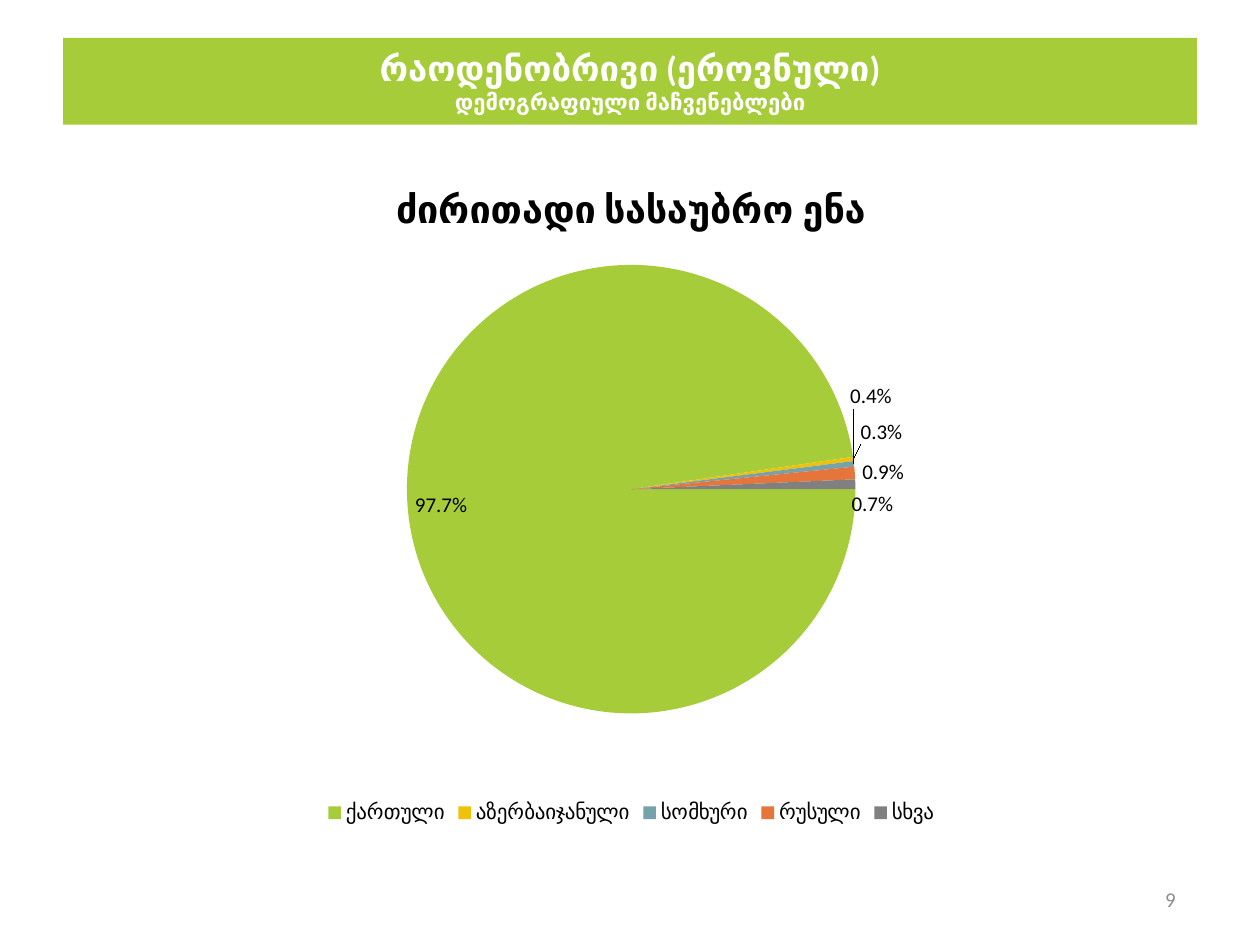
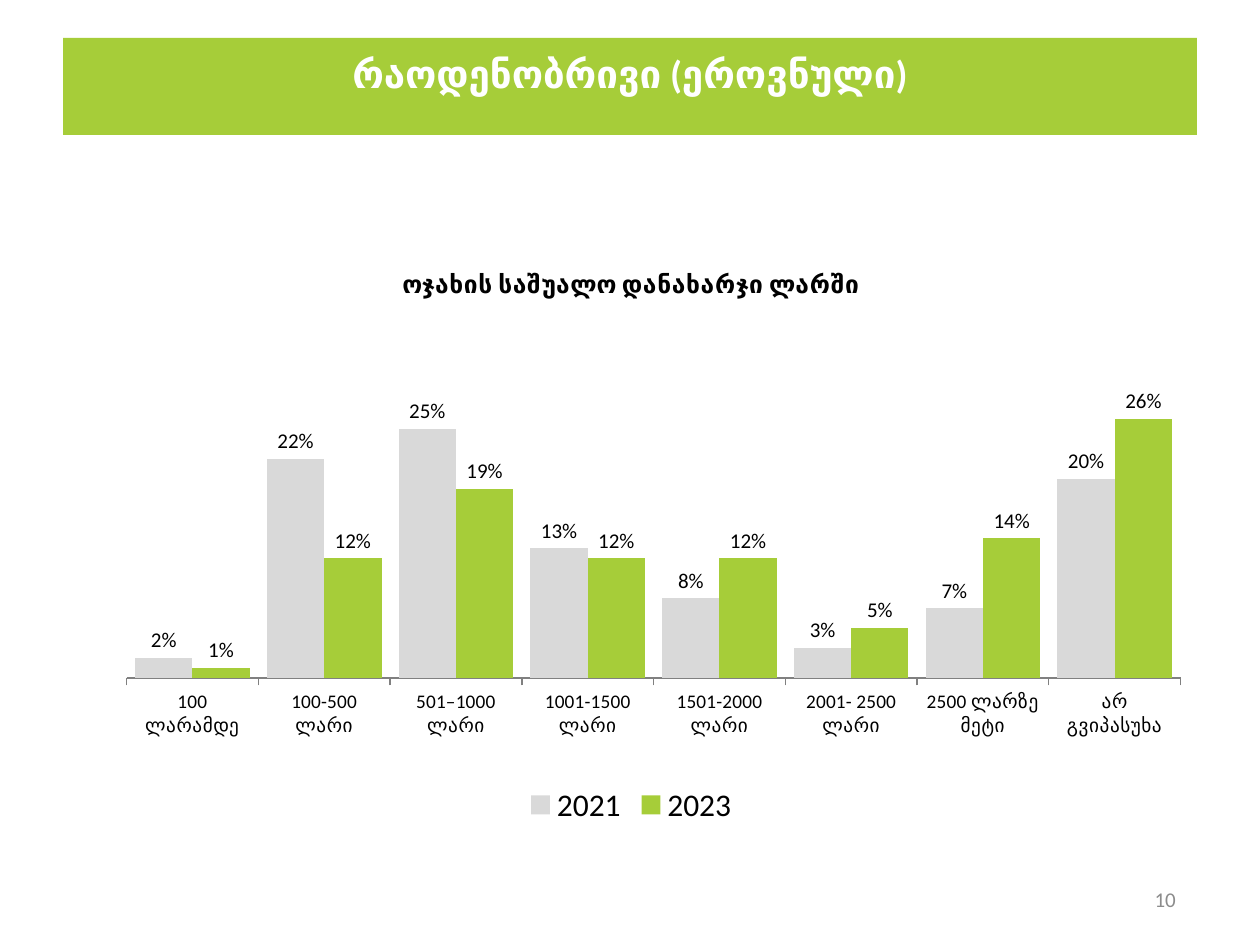
"""Build two survey slides: main spoken language and household spending."""
from copy import deepcopy
from dataclasses import dataclass

from lxml.etree import SubElement
from pptx import Presentation
from pptx.chart.data import CategoryChartData
from pptx.dml.color import RGBColor
from pptx.enum.chart import (XL_CHART_TYPE, XL_LABEL_POSITION,
                             XL_LEGEND_POSITION, XL_TICK_MARK)
from pptx.enum.text import MSO_ANCHOR, MSO_AUTO_SIZE, PP_ALIGN
from pptx.oxml.ns import qn
from pptx.util import Inches, Pt


@dataclass(frozen=True)
class Theme:
    """Colours, font and type sizes shared by the slides."""
    font: str = "Calibri"
    green: str = "A6CD39"
    yellow: str = "EDC209"
    blue: str = "76A2AB"
    orange: str = "E5753A"
    grey: str = "808080"
    light_grey: str = "D9D9D9"
    number_grey: str = "8C8C8C"
    white: str = "FFFFFF"
    black: str = "000000"
    chart_size: float = 18
    label_size: float = 12
    axis_size: float = 11


def set_manual_layout(layout, **settings):
    """Fill a chart layout element with manual settings."""
    manual = SubElement(layout, qn("c:manualLayout"))
    for name, value in settings.items():
        SubElement(manual, qn(f"c:{name}")).set("val", str(value))


class SurveyDeck:
    """Hold the theme, the deck and the current page."""

    def __init__(self, theme):
        self.theme = theme
        self.deck = Presentation()
        self.deck.slide_width, self.deck.slide_height = Inches(10), Inches(7.5)
        self.page = None

    def style(self, font, size, colour, bold=False):
        """Apply the deck font with the given size and colour."""
        font.name, font.size, font.bold = self.theme.font, Pt(size), bold
        font.color.rgb = RGBColor.from_string(colour)

    def paint(self, fill, colour):
        """Make a fill solid in one colour."""
        fill.solid()
        fill.fore_color.rgb = RGBColor.from_string(colour)

    def add_span(self, para, text, size, colour, bold=False):
        """Add one styled run."""
        span = para.add_run()
        span.text = text
        self.style(span.font, size, colour, bold)
        return span

    def add_page(self, number, title_lines, band_height, bottom_inset=0.05):
        """Start a page with its title band and page number."""
        self.page = self.deck.slides.add_slide(self.deck.slide_layouts[5])
        band = self.page.shapes.title
        band.left, band.top = Inches(0.5), Inches(0.3)
        band.width, band.height = Inches(9), Inches(band_height)
        self.paint(band.fill, self.theme.green)
        frame = band.text_frame
        frame.word_wrap, frame.auto_size = True, MSO_AUTO_SIZE.NONE
        frame.vertical_anchor = MSO_ANCHOR.MIDDLE
        frame.margin_bottom = Inches(bottom_inset)
        para = frame.paragraphs[0]
        para.alignment = PP_ALIGN.CENTER
        span = None
        for text, size in title_lines:
            if span is not None:
                para.add_line_break()
                para._p[-1].append(deepcopy(span._r.rPr))
            span = self.add_span(para, text, size, self.theme.white, True)
        self.add_page_number(number)

    def add_page_number(self, number):
        """Add the page number at the lower right."""
        box = self.page.shapes.add_textbox(
            Inches(9.02), Inches(6.94), Inches(0.41), Inches(0.4))
        frame = box.text_frame
        frame.word_wrap, frame.vertical_anchor = True, MSO_ANCHOR.MIDDLE
        para = frame.paragraphs[0]
        para.alignment = PP_ALIGN.RIGHT
        self.add_span(para, str(number), self.theme.label_size, self.theme.number_grey)

    def add_chart(self, kind, top, height, title, title_size, legend_size,
                  categories, series, plot_area):
        """Add a titled chart with a bottom legend and a fixed plot area."""
        data = CategoryChartData()
        data.categories = categories
        for name, values in series.items():
            data.add_series(name, values)
        chart = self.page.shapes.add_chart(
            kind, Inches(0.56), Inches(top), Inches(8.9), Inches(height), data).chart
        black = self.theme.black
        self.style(chart.font, self.theme.chart_size, black)
        chart.has_title = True
        para = chart.chart_title.text_frame.paragraphs[0]
        self.add_span(para, title, title_size, black, True)
        chart.has_legend = True
        chart.legend.position = XL_LEGEND_POSITION.BOTTOM
        chart.legend.include_in_layout = False
        self.style(chart.legend.font, legend_size, black)
        area = chart._chartSpace.chart.plotArea
        for layout in area.findall(qn("c:layout")):
            area.remove(layout)
        layout = SubElement(area, qn("c:layout"))
        area.insert(0, layout)
        left, upper, width, depth = plot_area
        set_manual_layout(layout, layoutTarget="inner", xMode="edge", yMode="edge",
                          x=left, y=upper, w=width, h=depth)
        return chart

    def show_values(self, series, number_format, position):
        """Show the values of a series as labels."""
        labels = series.data_labels
        labels.show_value = True
        labels.number_format, labels.number_format_is_linked = number_format, False
        labels.position = position
        self.style(labels.font, self.theme.label_size, self.theme.black)

    def move_label(self, point, number_format, offset, position):
        """Shift the label of one point from its usual place."""
        label = point.data_label
        self.style(label.font, self.theme.label_size, self.theme.black)
        label.position = position
        element = label._dLbl
        layout = SubElement(element, qn("c:layout"))
        element.insert(1, layout)
        set_manual_layout(layout, x=offset[0], y=offset[1])
        style = SubElement(element, qn("c:numFmt"))
        style.set("formatCode", number_format)
        style.set("sourceLinked", "0")
        element.insert(2, style)

    def add_pie(self, colours, number_format, label_offsets, **settings):
        """Add a pie that starts at three o'clock."""
        chart = self.add_chart(XL_CHART_TYPE.PIE, **settings)
        plot = chart.plots[0]
        plot.vary_by_categories = True
        SubElement(plot._element, qn("c:firstSliceAng")).set("val", "90")
        series = plot.series[0]
        self.show_values(series, number_format, XL_LABEL_POSITION.INSIDE_END)
        for index, colour in enumerate(colours):
            self.paint(series.points[index].format.fill, colour)
        for index, offset in label_offsets.items():
            self.move_label(series.points[index], number_format, offset,
                            XL_LABEL_POSITION.OUTSIDE_END)

    def add_columns(self, colours, number_format, **settings):
        """Add clustered columns with a hidden value axis."""
        chart = self.add_chart(XL_CHART_TYPE.COLUMN_CLUSTERED, **settings)
        plot = chart.plots[0]
        plot.vary_by_categories, plot.gap_width, plot.overlap = False, 30, 0
        for series, colour in zip(plot.series, colours):
            self.paint(series.format.fill, colour)
            self.show_values(series, number_format, XL_LABEL_POSITION.OUTSIDE_END)
        values = chart.value_axis
        values.minimum_scale, values.maximum_scale, values.major_unit = 0, 0.4, 0.2
        values.has_major_gridlines, values.visible = False, False
        axis = chart.category_axis
        axis.major_tick_mark = XL_TICK_MARK.OUTSIDE
        axis.format.line.color.rgb = RGBColor.from_string(self.theme.grey)
        self.style(axis.tick_labels.font, self.theme.axis_size, self.theme.black)


def main():
    """Build both pages and save the deck."""
    theme = Theme()
    survey = SurveyDeck(theme)
    heading = "რაოდენობრივი (ეროვნული)"

    survey.add_page(9, [(heading, 19.8), ("დემოგრაფიული მაჩვენებლები", 12.6)], 0.69)
    survey.add_pie(
        colours=[theme.green, theme.yellow, theme.blue, theme.orange, theme.grey],
        number_format="0.0%",
        label_offsets={1: (0, -0.02), 2: (-0.01, -0.08), 3: (0, 0), 4: (-0.01, 0.03)},
        top=1.23, height=5.36, title="ძირითადი სასაუბრო ენა", title_size=21.6,
        legend_size=theme.label_size,
        categories=["ქართული", "აზერბაიჯანული", "სომხური", "რუსული", "სხვა"],
        series={"Series 1": [0.977, 0.003, 0.004, 0.009, 0.007]},
        plot_area=(0.3, 0.11, 0.4, 0.77))

    survey.add_page(10, [(heading, 22)], 0.77, bottom_inset=0.26)
    survey.add_columns(
        colours=[theme.light_grey, theme.green], number_format="0%",
        top=1.94, height=4.65, title="ოჯახის საშუალო დანახარჯი ლარში", title_size=14,
        legend_size=theme.chart_size,
        categories=["100 ლარამდე", "100-500 ლარი", "501–1000 ლარი", "1001-1500 ლარი",
                    "1501-2000 ლარი", "2001- 2500 ლარი", "2500 ლარზე მეტი",
                    "არ გვიპასუხა"],
        series={"2021": [0.02, 0.22, 0.25, 0.13, 0.08, 0.03, 0.07, 0.2],
                "2023": [0.01, 0.12, 0.19, 0.12, 0.12, 0.05, 0.14, 0.26]},
        plot_area=(0.05, 0.06, 0.94, 0.68))

    survey.deck.save("out.pptx")


if __name__ == "__main__":
    main()
